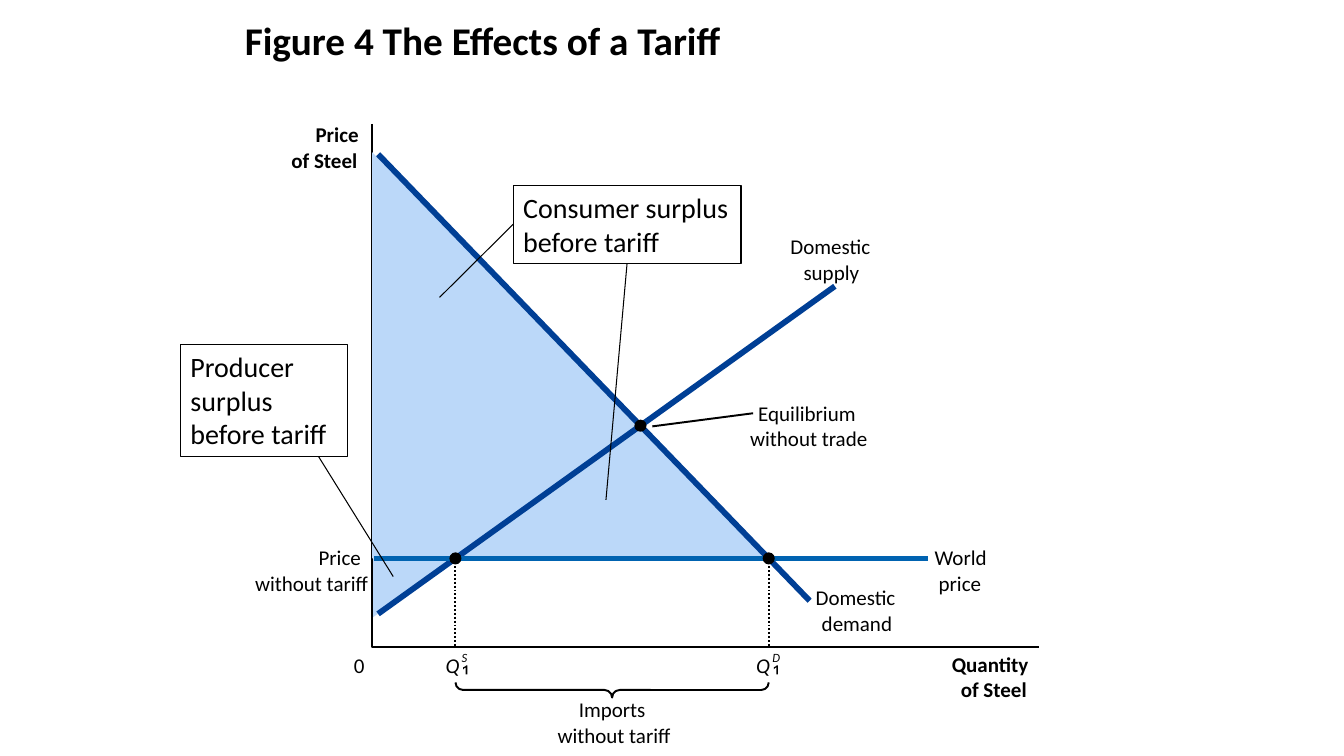
from pptx import Presentation
from pptx.dml.color import RGBColor
from pptx.enum.dml import MSO_LINE
from pptx.enum.shapes import MSO_CONNECTOR, MSO_SHAPE
from pptx.enum.text import MSO_ANCHOR, PP_ALIGN
from pptx.util import Inches, Pt
from lxml.etree import SubElement
from pptx.oxml.ns import qn

FONT, BLACK, WHITE = "Calibri", "000000", "FFFFFF"
SHADE, NAVY, BLUE = "BBD8F9", "003F95", "0063B1"
THICK, THIN, HAIR = 4.13, 1.38, 0.75
ROW, DOT = 0.255, 0.12

TITLE = "Figure 4 The Effects of a Tariff"
LEFT, TOP, BASE, RIGHT = 3.69, 1.23, 6.42, 10.3
WORLD = 5.54
SUPPLY = ((3.75, 6.09), (8.28, 2.84))
DEMAND = ((3.75, 1.53), (8.03, 5.96))
PRICE = ((3.71, WORLD), (9.2, WORLD))

LABELS = [
    (1.21, True, [("Price", 3.13, 0.43), ("of Steel", 2.89, 0.66)]),
    (6.46, True, [("Quantity", 9.44, 0.77), ("of Steel", 9.53, 0.66)]),
    (6.47, False, [("0", 3.51, 0.11)]),
    (2.32, False, [("Domestic", 7.84, 0.8), ("supply", 7.97, 0.56)]),
    (5.8, False, [("Domestic", 8.09, 0.8), ("demand", 8.15, 0.7)]),
    (6.91, False, [("Imports", 5.74, 0.69), ("without tariff", 5.53, 1.14)]),
    (3.97, False, [("Equilibrium", 7.52, 0.98), ("without trade", 7.44, 1.19)]),
    (5.4, False, [("Price", 3.16, 0.43), ("without tariff", 2.53, 1.14)]),
    (5.4, False, [("World", 9.27, 0.52), ("price", 9.31, 0.43)]),
]
AMOUNTS = [("S", 4.42, 0.06), ("D", 7.5, 0.08)]
ONE = [(0.04, 0), (0.03, 0), (0.02, 0.01), (0, 0.02), (0, 0.04),
       (0.01, 0.03), (0.025, 0.02), (0.025, 0.09), (0.04, 0.09)]
MAKER = ["Producer surplus", "before tariff"]
BUYER = ["Consumer surplus", "before tariff"]

deck = Presentation()
deck.slide_width, deck.slide_height = Inches(13.33), Inches(7.5)
slide = deck.slides.add_slide(deck.slide_layouts[6])
shapes = slide.shapes


def tint(code):
    return RGBColor.from_string(code)


def cross(one, two):
    (ax, ay), (bx, by) = one
    (cx, cy), (dx, dy) = two
    rise, fall = (by - ay) / (bx - ax), (dy - cy) / (dx - cx)
    x = (cy - ay + rise * ax - fall * cx) / (rise - fall)
    return x, ay + rise * (x - ax)


def paint(shape, fill=None, line=None, width=THIN):
    shape.shadow.inherit = False
    if fill:
        shape.fill.solid()
        shape.fill.fore_color.rgb = tint(fill)
    else:
        shape.fill.background()
    if line:
        shape.line.color.rgb = tint(line)
        shape.line.width = Pt(width)
    else:
        shape.line.fill.background()


def outline(spots, fill=None, line=None):
    spots = [(Inches(x), Inches(y)) for x, y in spots]
    form = shapes.build_freeform(*spots[0])
    form.add_line_segments(spots[1:], close=bool(fill))
    paint(form.convert_to_shape(), fill, line)


def preset(kind, x, y, w, h):
    return shapes.add_shape(kind, Inches(x), Inches(y), Inches(w), Inches(h))


def link(start, end, color=BLACK, width=THIN, dash=None):
    line = shapes.add_connector(
        MSO_CONNECTOR.STRAIGHT, *[Inches(v) for v in (*start, *end)])
    line.line.color.rgb = tint(color)
    line.line.width = Pt(width)
    if dash:
        line.line.dash_style = dash
    SubElement(line._element.spPr, qn("a:effectLst"))
    return line


def style(frame, size, bold=False, slant=False):
    for para in frame.paragraphs:
        para.alignment = PP_ALIGN.LEFT
        for run in para.runs:
            font = run.font
            font.name, font.size = FONT, Pt(size)
            font.bold, font.italic = bold, slant
            font.color.rgb = tint(BLACK)


def label(text, x, y, w, size=15, bold=False, slant=False):
    box = shapes.add_textbox(Inches(x), Inches(y), Inches(w), Inches(size / 60))
    frame = box.text_frame
    frame.word_wrap = False
    frame.margin_left = frame.margin_right = 0
    frame.margin_top = frame.margin_bottom = 0
    frame.text = text
    style(frame, size, bold, slant)


def note(lines, x, y, w, h, wrap):
    box = preset(MSO_SHAPE.RECTANGLE, x, y, w, h)
    paint(box, WHITE, BLACK, HAIR)
    frame = box.text_frame
    frame.word_wrap = wrap
    frame.vertical_anchor = MSO_ANCHOR.TOP
    frame.text = "\n".join(lines)
    style(frame, 20)
    return box


def dot(x, y):
    paint(preset(MSO_SHAPE.OVAL, x - DOT / 2, y - DOT / 2, DOT, DOT), BLACK)


head = shapes.add_textbox(Inches(2.33), Inches(0.06), Inches(9), Inches(0.75))
head.text_frame.word_wrap = True
head.text_frame.vertical_anchor = MSO_ANCHOR.MIDDLE
head.text_frame.text = TITLE
head.text_frame.paragraphs[0].line_spacing = 0.8
style(head.text_frame, 28, True)

sold, bought, even = cross(SUPPLY, PRICE), cross(DEMAND, PRICE), cross(SUPPLY, DEMAND)
outline([sold, (LEFT, WORLD), (LEFT, 6.13)], SHADE)
outline([(LEFT, TOP), (LEFT, BASE), (RIGHT, BASE)], line=BLACK)
outline([even, sold, (LEFT, WORLD), (LEFT, 1.51)], SHADE)
outline([even, bought, sold], SHADE)
link(*SUPPLY, NAVY, THICK)
link(*DEMAND, NAVY, THICK)
link(*PRICE, BLUE, THICK)
link((6.47, 4.23), (7.47, 4.1))
dot(*even)

for top, bold, lines in LABELS:
    for row, (text, x, w) in enumerate(lines):
        label(text, x, top + row * ROW, w, bold=bold)

for (mark, x, w), spot in zip(AMOUNTS, (sold, bought)):
    link(spot, (spot[0], BASE), dash=MSO_LINE.ROUND_DOT)
    dot(*spot)
    label("Q", x, 6.47, 0.14, slant=True)
    label(mark, x + 0.16, 6.45, w, 9, slant=True)
    outline([(x + 0.175 + dx, 6.6 + dy) for dx, dy in ONE], BLACK)

span, deep = bought[0] - sold[0], 0.15
brace = preset(MSO_SHAPE.RIGHT_BRACE, (sold[0] + bought[0] - deep) / 2,
               6.845 - span / 2, deep, span)
brace.rotation = 90
brace.adjustments[0] = 0.5
paint(brace, line=BLACK)

note(MAKER, 1.79, 3.42, 1.66, 1.11, True)
link((3.16, 4.53), (3.9, 5.72), width=HAIR)
box = note(BUYER, 5.09, 1.84, 2.26, 0.77, False)
for side, start, end in [(2, (6.22, 2.61), (6.01, 4.96)), (1, (5.09, 2.22), (4.36, 2.95))]:
    link(start, end, width=HAIR).begin_connect(box, side)

deck.save("out.pptx")
